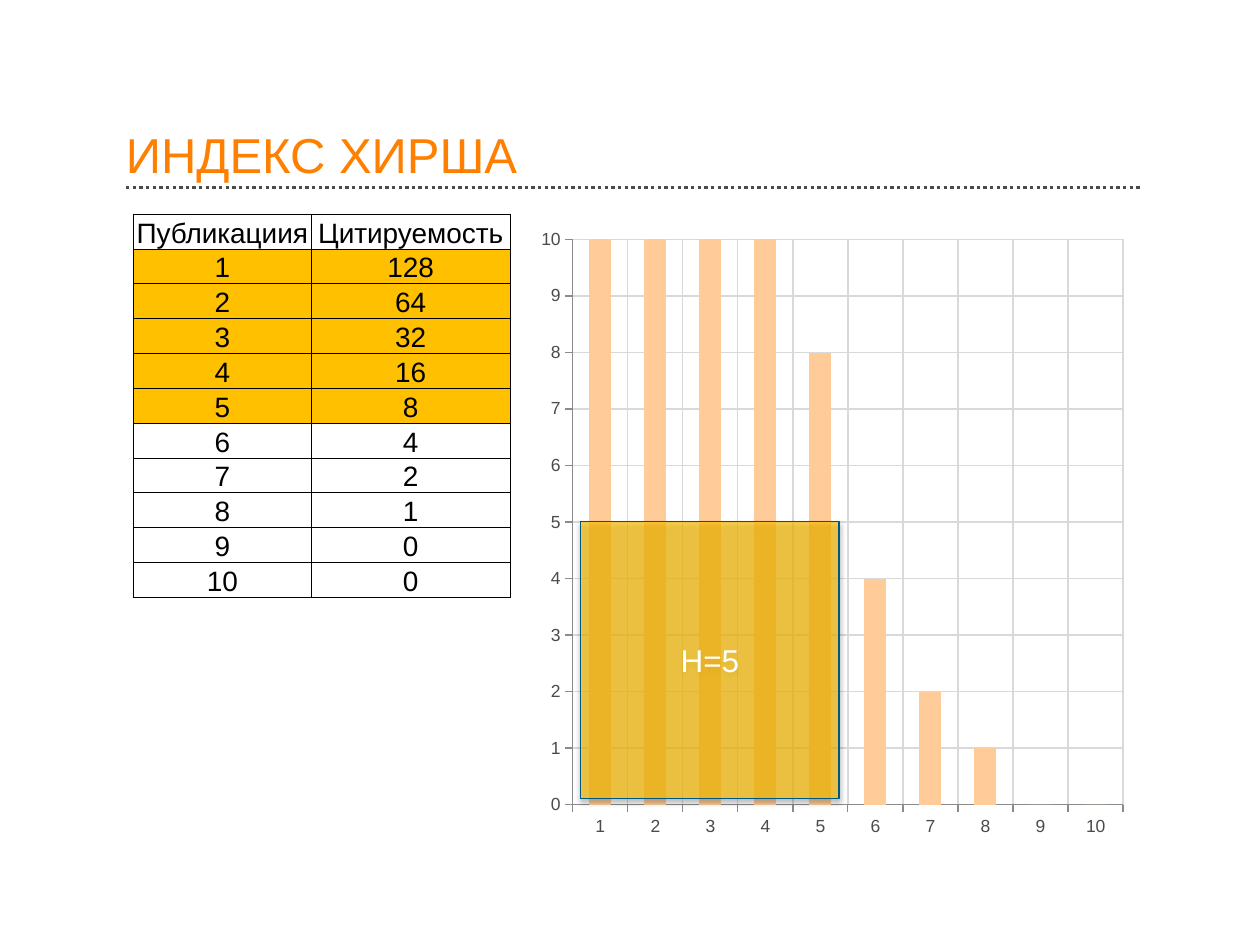
from lxml import etree
from pptx import Presentation
from pptx import util as u
from pptx.chart.data import CategoryChartData
from pptx.dml.color import RGBColor
from pptx.enum import chart as charts, dml, shapes, text
from pptx.oxml import parse_xml
from pptx.oxml.ns import nsdecls, qn

Pt = u.Pt
FONT = "Arial"
AMBER, GRAY, GRID = "FFC000", "4B4B4B", "D9D9D9"
CITATIONS = [128, 64, 32, 16, 8, 4, 2, 1, 0, 0]
H_INDEX = 5


def color(hex_value):
    return RGBColor.from_string(hex_value)


def set_values(target, values):
    for name, value in values.items():
        setattr(target, name, value)


def style_font(font, size, hex_value):
    set_values(font, {"name": FONT, "size": Pt(size)})
    font.color.rgb = color(hex_value)


def style_line(line, hex_value, width):
    line.color.rgb = color(hex_value)
    line.width = Pt(width)


def write(frame, words, size, hex_value, align):
    paragraph = frame.paragraphs[0]
    paragraph.text = words
    paragraph.alignment = align
    style_font(paragraph.runs[0].font, size, hex_value)
    return paragraph


def add_title(slide, words):
    frame = slide.shapes.add_textbox(Pt(72), Pt(39.6), Pt(580.3), Pt(65.5)).text_frame
    set_values(frame, {
        "word_wrap": True, "vertical_anchor": text.MSO_ANCHOR.BOTTOM,
        "margin_left": 0, "margin_right": 0, "margin_top": 0, "margin_bottom": 0,
    })
    write(frame, words, 28, "FF8000", text.PP_ALIGN.LEFT).line_spacing = 0.9


def add_dotted_rule(slide):
    rule = slide.shapes.add_connector(
        shapes.MSO_CONNECTOR.STRAIGHT, Pt(72), Pt(107.3), Pt(652.3), Pt(107.3))
    style_line(rule.line, GRAY, 1.9)
    rule.line.dash_style = dml.MSO_LINE.ROUND_DOT
    etree.SubElement(rule._element.spPr, qn("a:effectLst"))


def border_cell(cell):
    properties = cell._tc.get_or_add_tcPr()
    for position, side in enumerate(("lnL", "lnR", "lnT", "lnB")):
        properties.insert(position, parse_xml(
            f'<a:{side} {nsdecls("a")} w="{Pt(0.5)}"><a:solidFill>'
            f'<a:srgbClr val="000000"/></a:solidFill></a:{side}>'))


def add_citation_table(slide):
    rows = [("Публикациия", "Цитируемость"), *enumerate(CITATIONS, 1)]
    row_height = 18.5
    table = slide.shapes.add_table(
        len(rows), 2, Pt(76.3), Pt(122.4), Pt(215.3), Pt(row_height * len(rows))).table
    set_values(table, {"first_row": False, "horz_banding": False})
    for column, width in zip(table.columns, (101.5, 113.8)):
        column.width = Pt(width)
    for row_number, values in enumerate(rows):
        for cell, value in zip(table.rows[row_number].cells, values):
            set_values(cell, {
                "vertical_anchor": text.MSO_ANCHOR.BOTTOM, "margin_left": Pt(0.7),
                "margin_right": Pt(0.7), "margin_top": Pt(0.7), "margin_bottom": 0,
            })
            write(cell.text_frame, str(value), 16, "000000", text.PP_ALIGN.CENTER)
            if 1 <= row_number <= H_INDEX:
                cell.fill.solid()
                cell.fill.fore_color.rgb = color(AMBER)
            else:
                cell.fill.background()
            border_cell(cell)


def place_plot(chart, **fractions):
    """Fix the inner plot area as fractions of the chart's size."""
    plot_area = chart._chartSpace.chart.plotArea
    for layout in plot_area.findall(qn("c:layout")):
        plot_area.remove(layout)
    sizes = "".join(f'<c:{key} val="{value}"/>' for key, value in fractions.items())
    plot_area.insert(0, parse_xml(
        f'<c:layout {nsdecls("c")}><c:manualLayout><c:layoutTarget val="inner"/>'
        f'<c:xMode val="edge"/><c:yMode val="edge"/>{sizes}'
        '</c:manualLayout></c:layout>'))


def add_citation_chart(slide):
    data = CategoryChartData()
    data.categories = [str(number) for number in range(1, len(CITATIONS) + 1)]
    data.add_series("Series 1", CITATIONS)
    chart = slide.shapes.add_chart(
        charts.XL_CHART_TYPE.COLUMN_CLUSTERED,
        Pt(303.1), Pt(122.4), Pt(345.6), Pt(362.9), data).chart
    set_values(chart, {"has_legend": False, "has_title": False})
    style_font(chart.font, 10, GRAY)
    for axis in (chart.category_axis, chart.value_axis):
        set_values(axis, {
            "has_major_gridlines": True,
            "major_tick_mark": charts.XL_TICK_MARK.OUTSIDE,
            "minor_tick_mark": charts.XL_TICK_MARK.NONE,
        })
        style_line(axis.major_gridlines.format.line, GRID, 0.75)
        style_line(axis.format.line, "8B8B8B", 0.75)
    set_values(chart.value_axis, {
        "minimum_scale": 0, "maximum_scale": 10, "major_unit": 1})
    set_values(chart.plots[0], {"gap_width": 150, "vary_by_categories": False})
    bars = chart.plots[0].series[0].format.fill
    bars.solid()
    bars.fore_color.rgb = color("FFCC99")
    place_plot(chart, x=0.07, y=0.04, w=0.91, h=0.89)


def add_h_square(slide):
    square = slide.shapes.add_shape(
        shapes.MSO_SHAPE.RECTANGLE, Pt(331.9), Pt(298.1), Pt(147.6), Pt(158.4))
    square.fill.solid()
    square.fill.fore_color.rgb = color(AMBER)
    tint = square._element.spPr.find(qn("a:solidFill"))[0]
    etree.SubElement(tint, qn("a:alpha"), val="67000")
    style_line(square.line, "005881", 0.75)
    square._element.spPr.append(parse_xml(
        f'<a:effectLst {nsdecls("a")}><a:outerShdw blurRad="{Pt(3.1)}" '
        f'dist="{Pt(1.8)}" dir="5400000" rotWithShape="0"><a:srgbClr val="000000">'
        '<a:alpha val="35000"/></a:srgbClr></a:outerShdw></a:effectLst>'))
    square.text_frame.vertical_anchor = text.MSO_ANCHOR.MIDDLE
    write(square.text_frame, f"H={H_INDEX}", 18, "FFFFFF", text.PP_ALIGN.CENTER)


def main():
    deck = Presentation()
    set_values(deck, {"slide_width": Pt(720), "slide_height": Pt(540)})
    slide = deck.slides.add_slide(deck.slide_layouts[6])
    add_dotted_rule(slide)
    add_title(slide, "ИНДЕКС ХИРША")
    add_citation_table(slide)
    add_citation_chart(slide)
    add_h_square(slide)
    deck.save("out.pptx")


if __name__ == "__main__":
    main()
